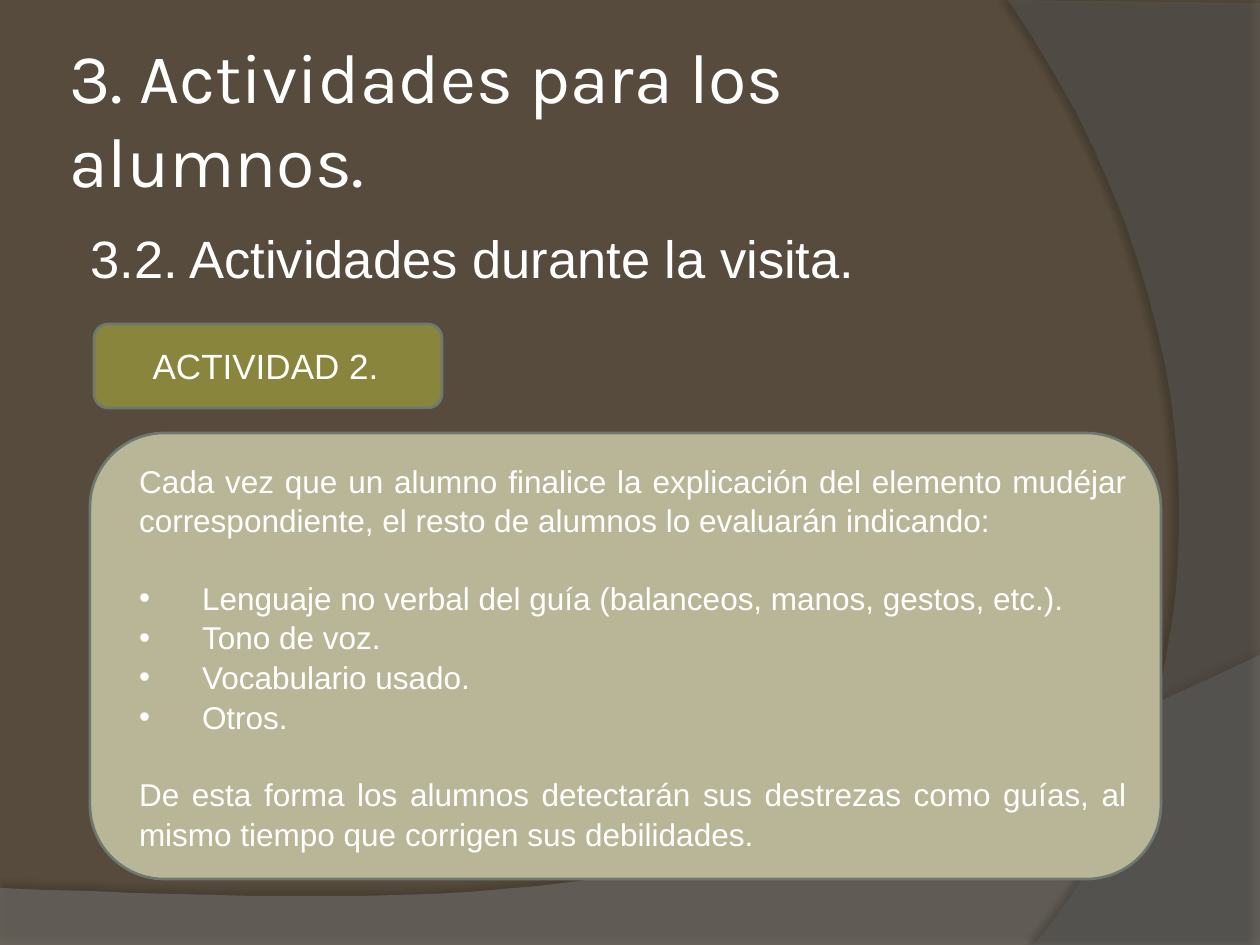
from pptx import Presentation
from pptx.dml.color import RGBColor
from pptx.enum.shapes import MSO_SHAPE
from pptx.enum.text import MSO_ANCHOR, PP_ALIGN
from pptx.oxml import parse_xml
from pptx.oxml.ns import nsdecls, qn
from pptx.util import Pt
from lxml import etree

ROUND = MSO_SHAPE.ROUNDED_RECTANGLE
TOP, MIDDLE = MSO_ANCHOR.TOP, MSO_ANCHOR.MIDDLE
LEFT, CENTER, JUSTIFY = PP_ALIGN.LEFT, PP_ALIGN.CENTER, PP_ALIGN.JUSTIFY
SCALE = 914400 / 126
STEPS = 32

THEME = {
    "back": "564B3C", "wave": "7F7F7F", "arc": "5E5E5E", "text": "FFFFFF",
    "label": "8A853C", "panel": "B9B697", "edge": "6D7871",
    "head": "Karla", "body": "Arial",
    "title": 40, "sub": 30, "tag": 20, "copy": 18, "line": 1.5,
}

# Each backdrop: straight corners, then the two controls and end of a curve
WAVE = [(0, 888), (0, 946), (1260, 946), (1260, 655)], [(704, 919), (493, 906), (0, 888)]
ARC = [(1260, 3), (1260, 945), (1034, 945)], [(1178, 780), (1283, 402), (1008, 0)]

TITLE = "3. Actividades para los alumnos."
SUB = "3.2. Actividades durante la visita."
TAG = "ACTIVIDAD 2. "
INTRO = ("Cada vez que un alumno finalice la explicación del elemento mudéjar "
         "correspondiente, el resto de alumnos lo evaluarán indicando:")
POINTS = ["Lenguaje no verbal del guía (balanceos, manos, gestos, etc.).",
          "Tono de voz.", "Vocabulario usado.", "Otros."]
CLOSE = ("De esta forma los alumnos detectarán sus destrezas como guías, "
         "al mismo tiempo que corrigen sus debilidades.")


def px(n):
    return round(n * SCALE)


def rgb(name):
    return RGBColor.from_string(THEME[name])


def curve(start, ctrl):
    """Points along a cubic Bézier, without its start."""
    pts = [start, *ctrl]
    for i in range(1, STEPS + 1):
        t = i / STEPS
        mix = [(1 - t) ** 3, 3 * t * (1 - t) ** 2, 3 * t * t * (1 - t), t ** 3]
        yield tuple(sum(m * p[k] for m, p in zip(mix, pts)) for k in (0, 1))


def backdrop(slide, shape, color, alpha, shade, dist, angle):
    """Translucent outline with a soft shadow."""
    line, ctrl = shape
    pen = slide.shapes.build_freeform(*line[0], scale=SCALE)
    pen.add_line_segments([*line[1:], *curve(line[-1], ctrl)], close=True)
    form = pen.convert_to_shape()
    form.fill.solid()
    form.fill.fore_color.rgb = rgb(color)
    form.line.fill.background()
    props = form._element.spPr
    tone = props.find(qn("a:solidFill"))[0]
    etree.SubElement(tone, qn("a:alpha")).set("val", str(alpha * 1000))
    props.append(parse_xml(
        f'<a:effectLst {nsdecls("a")}><a:outerShdw blurRad="{Pt(4)}" '
        f'dist="{Pt(dist)}" dir="{angle * 60000}" algn="ctr" rotWithShape="0">'
        f'<a:srgbClr val="000000"><a:alpha val="{shade * 1000}"/></a:srgbClr>'
        '</a:outerShdw></a:effectLst>'))


def panel(slide, box, fill):
    form = slide.shapes.add_shape(ROUND, *map(px, box))
    form.shadow.inherit = False
    form.fill.solid()
    form.fill.fore_color.rgb = rgb(fill)
    form.line.color.rgb = rgb("edge")
    form.line.width = Pt(THEME["line"])
    return form


def write(form, texts, size, font="body", align=JUSTIFY, anchor=MIDDLE, left=15):
    frame = form.text_frame
    frame.word_wrap = True
    frame.vertical_anchor = anchor
    frame.text = "\n".join(texts)
    for para in frame.paragraphs:
        para.alignment = align
        para._p.get_or_add_pPr().set("marL", str(px(left)))
        for run in para.runs:
            run.font.name = THEME[font]
            run.font.size = Pt(THEME[size])
            run.font.color.rgb = rgb("text")
    return frame


def bullet(para):
    props = para._p.get_or_add_pPr()
    props.set("marL", str(px(78)))
    props.set("indent", str(px(-63)))
    etree.SubElement(props, qn("a:buFont")).set("typeface", "Arial")
    etree.SubElement(props, qn("a:buChar")).set("char", "•")


def main():
    deck = Presentation()
    deck.slide_width, deck.slide_height = px(1260), px(945)
    slide = deck.slides.add_slide(deck.slide_layouts[6])
    slide.background.fill.solid()
    slide.background.fill.fore_color.rgb = rgb("back")
    backdrop(slide, WAVE, "wave", 45, 35, 3.5, 270)
    backdrop(slide, ARC, "arc", 40, 45, 4, 180)

    title = slide.shapes.add_textbox(*map(px, (63, 38, 1029, 158)))
    frame = write(title, [TITLE], "title", "head", LEFT, left=0)
    frame.margin_left = frame.margin_right = px(6)
    frame.margin_top = frame.margin_bottom = px(6)

    sub = slide.shapes.add_textbox(*map(px, (63, 220, 1082, 624)))
    frame = write(sub, [SUB], "sub", anchor=TOP)
    frame.paragraphs[0].space_before = Pt(4)

    write(panel(slide, (94, 324, 348, 84), "label"), [TAG], "tag", align=CENTER, left=5)

    card = panel(slide, (90, 433, 1071, 446), "panel")
    paras = write(card, [INTRO, *POINTS, CLOSE], "copy").paragraphs
    for para in paras:
        para.line_spacing = 1.05
    for para in (paras[1], paras[-1]):
        para.space_before = Pt(21.5)
    for para in paras[1:-1]:
        bullet(para)
    deck.save("out.pptx")


if __name__ == "__main__":
    main()
